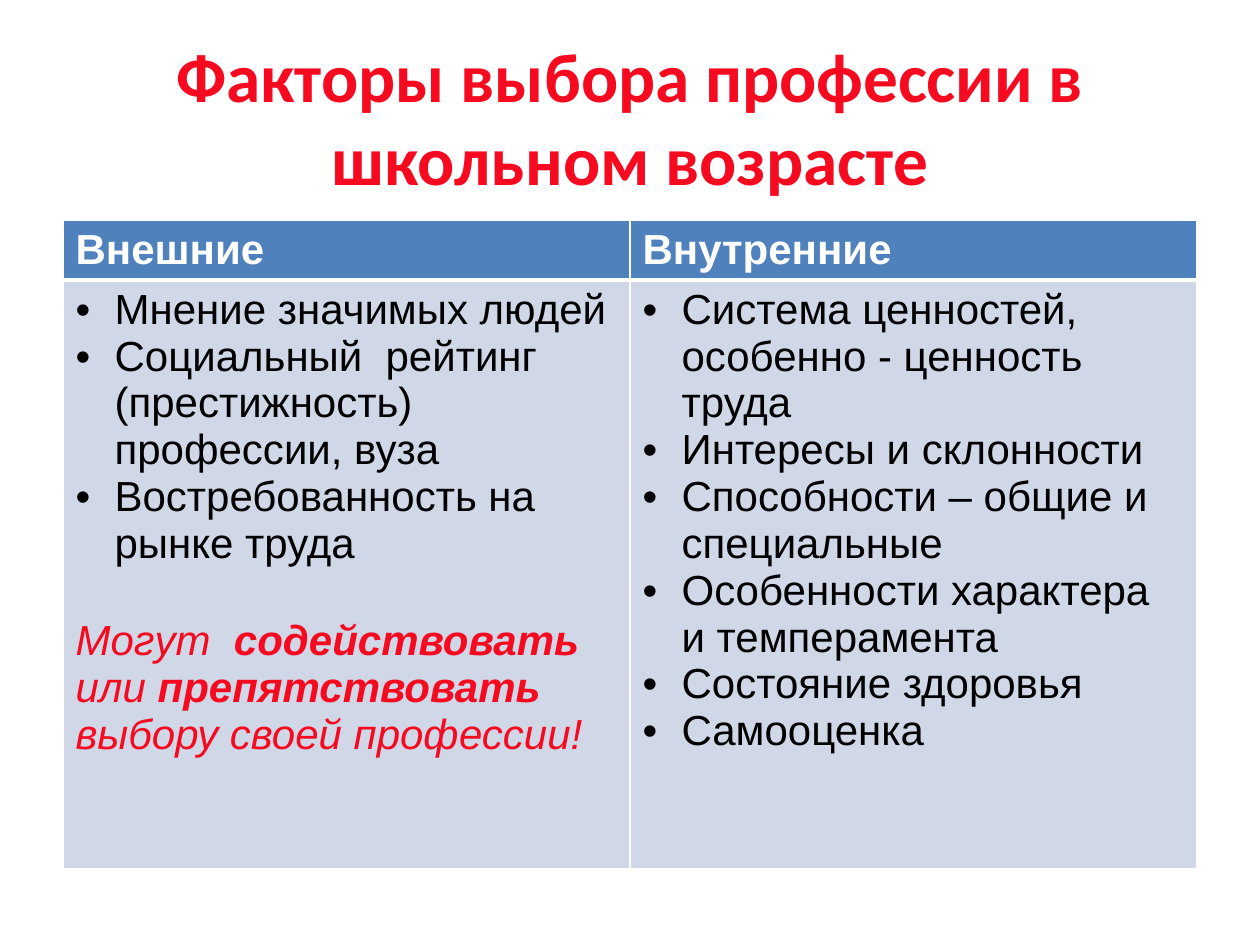
from lxml.etree import SubElement
from pptx import Presentation
from pptx.dml.color import RGBColor
from pptx.enum.text import MSO_ANCHOR, PP_ALIGN
from pptx.oxml.ns import qn
from pptx.util import Inches, Pt

RED, WHITE, BLACK = "F60A20", "FFFFFF", "000000"
HEADER_BLUE, BODY_BLUE = "4F81BD", "D0D8E8"

EXTERNAL = [
    "Мнение значимых людей",
    "Социальный  рейтинг (престижность) профессии, вуза",
    "Востребованность на рынке труда",
]
INTERNAL = [
    "Система ценностей, особенно - ценность  труда",
    "Интересы и склонности",
    "Способности – общие и специальные",
    "Особенности характера и темперамента",
    "Состояние здоровья",
    "Самооценка",
]
CONCLUSION = [
    ("Могут  ", False),
    ("содействовать", True),
    (" или ", False),
    ("препятствовать ", True),
    (" выбору своей профессии!", False),
]


def color(hex_value):
    return RGBColor.from_string(hex_value)


def add_run(paragraph, text, hex_value, size=24, font="Arial", bold=False, italic=False):
    run = paragraph.add_run()
    run.text = text
    run.font.name = font
    run.font.size = Pt(size)
    run.font.bold = bold
    run.font.italic = italic
    run.font.color.rgb = color(hex_value)


def add_bullet(paragraph):
    properties = paragraph._p.get_or_add_pPr()
    properties.set("marL", str(Inches(0.31)))
    properties.set("indent", str(-Inches(0.31)))
    SubElement(properties, qn("a:buFont"), typeface="Arial")
    SubElement(properties, qn("a:buChar"), char="•")


def style_cell(cell, fill, top=1, bottom=1):
    properties = cell._tc.get_or_add_tcPr()
    for side, width in (("L", 1), ("R", 1), ("T", top), ("B", bottom)):
        border = SubElement(properties, qn(f"a:ln{side}"), w=str(Pt(width)))
        SubElement(SubElement(border, qn("a:solidFill")), qn("a:srgbClr"), val=WHITE)
    cell.fill.solid()
    cell.fill.fore_color.rgb = color(fill)


def place_title(slide, left, top, width, height):
    title = slide.shapes.title
    title.left, title.top, title.width, title.height = left, top, width, height
    frame = title.text_frame
    frame.word_wrap = True
    frame.vertical_anchor = MSO_ANCHOR.MIDDLE
    heading = frame.paragraphs[0]
    heading.alignment = PP_ALIGN.CENTER
    add_run(heading, "Факторы выбора профессии в школьном возрасте", RED,
            size=39.6, font="Calibri", bold=True)


def place_factors(slide, left, top, width, height):
    factors = slide.shapes.add_table(2, 2, left, top, width, height).table
    header_height = Inches(0.46)
    factors.rows[0].height = header_height
    factors.rows[1].height = height - header_height
    columns = (("Внешние", EXTERNAL), ("Внутренние", INTERNAL))
    for index, (heading, items) in enumerate(columns):
        header, body = factors.cell(0, index), factors.cell(1, index)
        style_cell(header, HEADER_BLUE, bottom=3)
        style_cell(body, BODY_BLUE, top=3)
        add_run(header.text_frame.paragraphs[0], heading, WHITE, bold=True)
        for number, item in enumerate(items):
            frame = body.text_frame
            paragraph = frame.add_paragraph() if number else frame.paragraphs[0]
            add_bullet(paragraph)
            add_run(paragraph, item, BLACK)

    conclusion = factors.cell(1, 0).text_frame.add_paragraph()
    conclusion.space_before = Pt(29)
    for text, bold in CONCLUSION:
        add_run(conclusion, text, RED, bold=bold, italic=True)


def main():
    presentation = Presentation()
    presentation.slide_width = Inches(10)
    presentation.slide_height = Inches(7.5)
    slide = presentation.slides.add_slide(presentation.slide_layouts[5])
    place_title(slide, Inches(0.5), Inches(0.3), Inches(9), Inches(1.25))
    place_factors(slide, Inches(0.5), Inches(1.75), Inches(9), Inches(5.13))
    presentation.save("out.pptx")


if __name__ == "__main__":
    main()
